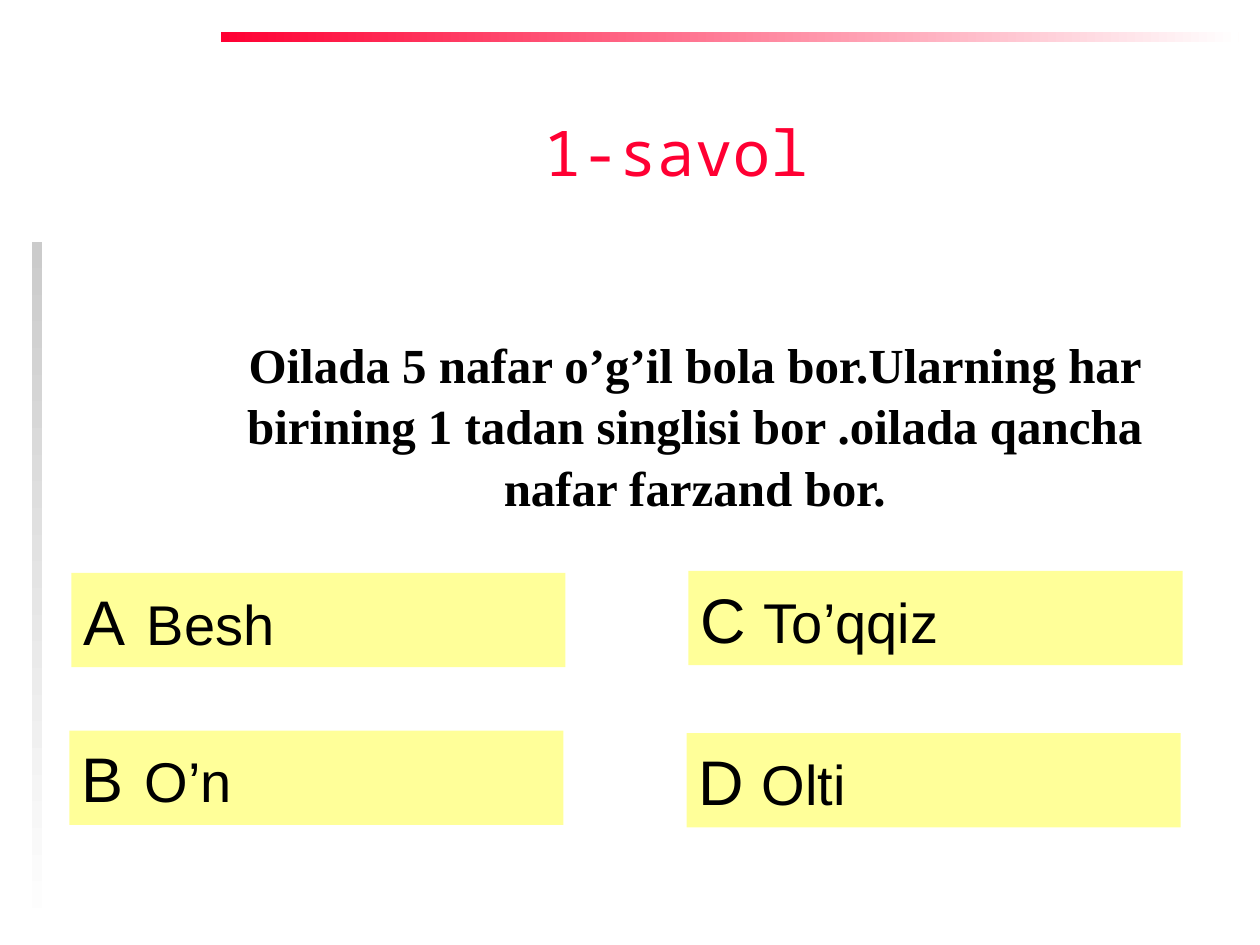
from dataclasses import dataclass

from pptx import Presentation
from pptx.dml.color import RGBColor
from pptx.enum.shapes import MSO_SHAPE
from pptx.enum.text import MSO_ANCHOR, MSO_AUTO_SIZE, PP_ALIGN
from pptx.oxml.ns import qn
from pptx.util import Cm, Pt
from lxml.etree import SubElement

COLOURS = {
    "accent": "FF0033",
    "grey": "CBCBCB",
    "fade": "FFFFFF",
    "answer": "FFFF99",
    "ink": "000000",
}
LETTER_SIZE, ANSWER_SIZE = 36, 32
ANSWER_WIDTH, ANSWER_HEIGHT = 9.96, 1.9
ANSWER_TAB = 1.58


@dataclass
class Bar:
    left: float
    top: float
    width: float
    height: float
    colour: str
    angle: int


@dataclass
class Answer:
    letter: str
    wording: str
    left: float
    top: float


BARS = [
    Bar(4.45, 0.64, 20.52, 0.21, "accent", 0),
    Bar(0.64, 4.87, 0.21, 13.97, "grey", 270),
]
ANSWERS = [
    Answer("А", "Besh", 1.44, 11.55),
    Answer("B", "O’n", 1.4, 14.73),
    Answer("C", "To’qqiz", 13.88, 11.51),
    Answer("D", "Olti", 13.84, 14.78),
]


def rgb(name: str) -> RGBColor:
    return RGBColor.from_string(COLOURS[name])


def place(shape, left: float, top: float, width: float, height: float) -> None:
    shape.left, shape.top = Cm(left), Cm(top)
    shape.width, shape.height = Cm(width), Cm(height)


def write(shape, *runs: tuple[str, int], font: str, colour: str = "ink",
          bold: bool = False, align=PP_ALIGN.LEFT, anchor=MSO_ANCHOR.TOP,
          indent: float = 0, tab: float = 0, line_spacing: float = 1.0) -> None:
    """Fill a shape with one paragraph made of (text, size) runs."""
    frame = shape.text_frame
    frame.word_wrap = True
    frame.auto_size = MSO_AUTO_SIZE.NONE
    frame.vertical_anchor = anchor
    paragraph = frame.paragraphs[0]
    properties = paragraph._p.get_or_add_pPr()
    properties.set("marL", str(Cm(indent)))
    properties.set("indent", "0")
    SubElement(properties, qn("a:buNone"))
    if tab:
        stops = SubElement(properties, qn("a:tabLst"))
        SubElement(stops, qn("a:tab"), pos=str(Cm(tab)), algn="l")
    paragraph.alignment = align
    paragraph.line_spacing = line_spacing
    paragraph.space_before = Pt(0)
    for text, size in runs:
        run = paragraph.add_run()
        run.text = text
        run.font.name = font
        run.font.size = Pt(size)
        run.font.bold = bold
        run.font.color.rgb = rgb(colour)


def add_rectangle(slide, left: float, top: float, width: float, height: float):
    rectangle = slide.shapes.add_shape(
        MSO_SHAPE.RECTANGLE, Cm(left), Cm(top), Cm(width), Cm(height))
    rectangle.shadow.inherit = False
    rectangle.line.fill.background()
    return rectangle


def draw_bar(slide, bar: Bar) -> None:
    fill = add_rectangle(slide, bar.left, bar.top, bar.width, bar.height).fill
    fill.gradient()
    fill.gradient_angle = bar.angle
    for stop, position, colour in zip(fill.gradient_stops, (0, 1), (bar.colour, "fade")):
        stop.position = position
        stop.color.rgb = rgb(colour)


def draw_answer(slide, answer: Answer) -> None:
    panel = add_rectangle(slide, answer.left, answer.top, ANSWER_WIDTH, ANSWER_HEIGHT)
    panel.fill.solid()
    panel.fill.fore_color.rgb = rgb("answer")
    write(panel, (answer.letter + "\t", LETTER_SIZE), (answer.wording, ANSWER_SIZE),
          font="Arial", anchor=MSO_ANCHOR.MIDDLE, tab=ANSWER_TAB)


def main() -> None:
    presentation = Presentation()
    presentation.slide_width, presentation.slide_height = Cm(25.4), Cm(19.05)
    slide = presentation.slides.add_slide(presentation.slide_layouts[1])

    for bar in BARS:
        draw_bar(slide, bar)

    heading = slide.shapes.title
    place(heading, 10.31, 2.16, 6.63, 2.24)
    write(heading, ("1-savol", 36), font="Noto Sans Mono", colour="accent",
          align=PP_ALIGN.CENTER)

    question = slide.placeholders[1]
    place(question, 3.33, 6.55, 20.4, 3.99)
    write(question, ("Oilada 5 nafar o’g’il bola bor.Ularning har birining 1 tadan "
                     "singlisi bor .oilada qancha nafar farzand bor.", 28),
          font="Times New Roman", bold=True, align=PP_ALIGN.CENTER,
          indent=0.95, line_spacing=1.05)

    for answer in ANSWERS:
        draw_answer(slide, answer)

    presentation.save("out.pptx")


if __name__ == "__main__":
    main()
